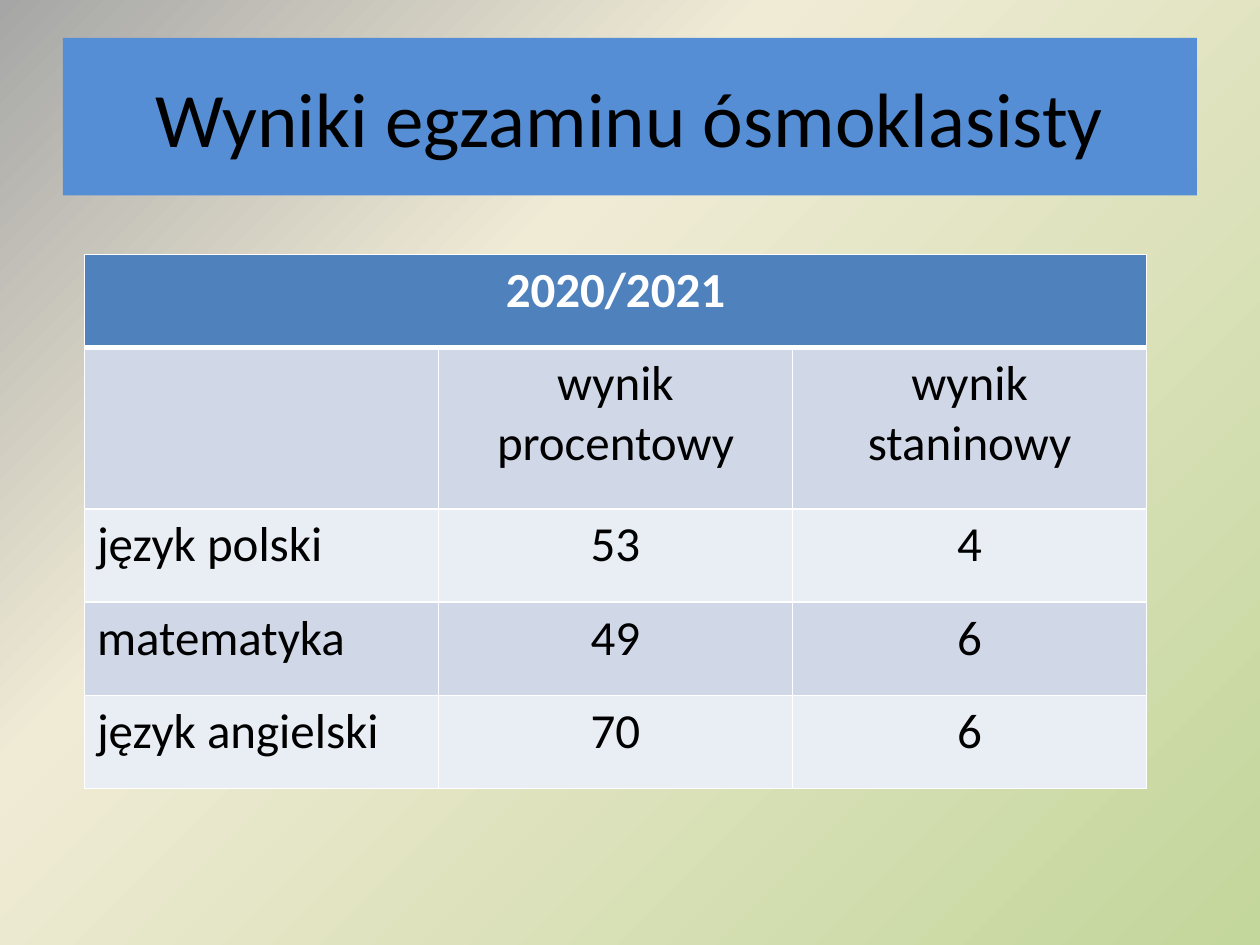
from dataclasses import dataclass

from pptx import Presentation
from pptx.dml.color import RGBColor
from pptx.enum.shapes import MSO_SHAPE
from pptx.enum.text import MSO_ANCHOR, PP_ALIGN
from pptx.oxml import parse_xml
from pptx.oxml.ns import nsdecls
from pptx.util import Inches, Pt


@dataclass(frozen=True)
class Theme:
    font: str = "Calibri"
    title_size: int = 44
    cell_size: int = 28
    ink: str = "000000"
    light: str = "FFFFFF"
    banner: str = "558ED5"
    header: str = "4F81BD"
    bands: tuple = ("D0D8E8", "E9EDF4")
    backdrop: tuple = ((0, "C3D69B"), (65, "F0EBD5"), (100, "A6A6A6"))
    rule: int = 1
    header_rule: int = 3


THEME = Theme()
WIDTH, HEIGHT = Inches(10), Inches(7.5)
YEAR = "2020/2021"
RESULTS = (
    ("", "wynik procentowy", "wynik staninowy"),
    ("język polski", "53", "4"),
    ("matematyka", "49", "6"),
    ("język angielski", "70", "6"),
)
COLUMN_WIDTH = Inches(2.81)
ROW_HEIGHT, LABEL_ROW_HEIGHT = Inches(0.74), Inches(1.28)


def write(frame, text, size=THEME.cell_size, color=THEME.ink, bold=False,
          align=PP_ALIGN.CENTER):
    paragraph = frame.paragraphs[0]
    paragraph.alignment = align
    font = paragraph.font
    if text:
        run = paragraph.add_run()
        run.text = text
        font = run.font
    font.name = THEME.font
    font.size = Pt(size)
    font.bold = bold
    font.color.rgb = RGBColor.from_string(color)


def paint(target, color):
    target.fill.solid()
    target.fill.fore_color.rgb = RGBColor.from_string(color)


def paint_backdrop(slide):
    slide.background.fill.solid()
    properties = slide.element.xpath(".//p:bgPr")[0]
    stops = "".join(
        f'<a:gs pos="{share * 1000}"><a:srgbClr val="{color}"/></a:gs>'
        for share, color in THEME.backdrop
    )
    gradient = parse_xml(
        f'<a:gradFill {nsdecls("a")} rotWithShape="1"><a:gsLst>{stops}</a:gsLst>'
        '<a:path path="circle"><a:fillToRect l="100000" t="100000"/></a:path>'
        '</a:gradFill>'
    )
    properties.replace(properties[0], gradient)


def add_banner(slide, text):
    banner = slide.shapes.add_shape(
        MSO_SHAPE.RECTANGLE, int(WIDTH * 0.05), int(HEIGHT * 0.04),
        int(WIDTH * 0.9), Inches(1.25),
    )
    banner.shadow.inherit = False
    banner.line.fill.background()
    paint(banner, THEME.banner)
    banner.text_frame.word_wrap = True
    banner.text_frame.vertical_anchor = MSO_ANCHOR.MIDDLE
    write(banner.text_frame, text, size=THEME.title_size)


def rule_cell(cell, top, bottom):
    properties = cell._tc.get_or_add_tcPr()
    widths = {"L": THEME.rule, "R": THEME.rule, "T": top, "B": bottom}
    for position, (side, width) in enumerate(widths.items()):
        properties.insert(position, parse_xml(
            f'<a:ln{side} {nsdecls("a")} w="{Pt(width)}"><a:solidFill>'
            f'<a:srgbClr val="{THEME.light}"/></a:solidFill></a:ln{side}>'
        ))


def add_results(slide):
    rows, columns = len(RESULTS) + 1, len(RESULTS[0])
    table = slide.shapes.add_table(
        rows, columns, Inches(0.67), Inches(2.02), COLUMN_WIDTH * columns,
        ROW_HEIGHT * (rows - 1) + LABEL_ROW_HEIGHT,
    ).table
    for column in table.columns:
        column.width = COLUMN_WIDTH
    for index, row in enumerate(table.rows):
        row.height = LABEL_ROW_HEIGHT if index == 1 else ROW_HEIGHT

    for cell in table.rows[0].cells:
        paint(cell, THEME.header)
        rule_cell(cell, THEME.rule, THEME.header_rule)
    year = table.cell(0, 0)
    year.merge(table.cell(0, columns - 1))
    write(year.text_frame, YEAR, color=THEME.light, bold=True)

    for index, values in enumerate(RESULTS):
        top = THEME.rule if index else THEME.header_rule
        for column, value in enumerate(values):
            cell = table.cell(index + 1, column)
            paint(cell, THEME.bands[index % 2])
            rule_cell(cell, top, THEME.rule)
            write(cell.text_frame, value,
                  align=PP_ALIGN.CENTER if column else PP_ALIGN.LEFT)


def main():
    deck = Presentation()
    deck.slide_width, deck.slide_height = WIDTH, HEIGHT
    slide = deck.slides.add_slide(deck.slide_layouts[6])
    paint_backdrop(slide)
    add_banner(slide, "Wyniki egzaminu ósmoklasisty")
    add_results(slide)
    deck.save("out.pptx")


if __name__ == "__main__":
    main()
